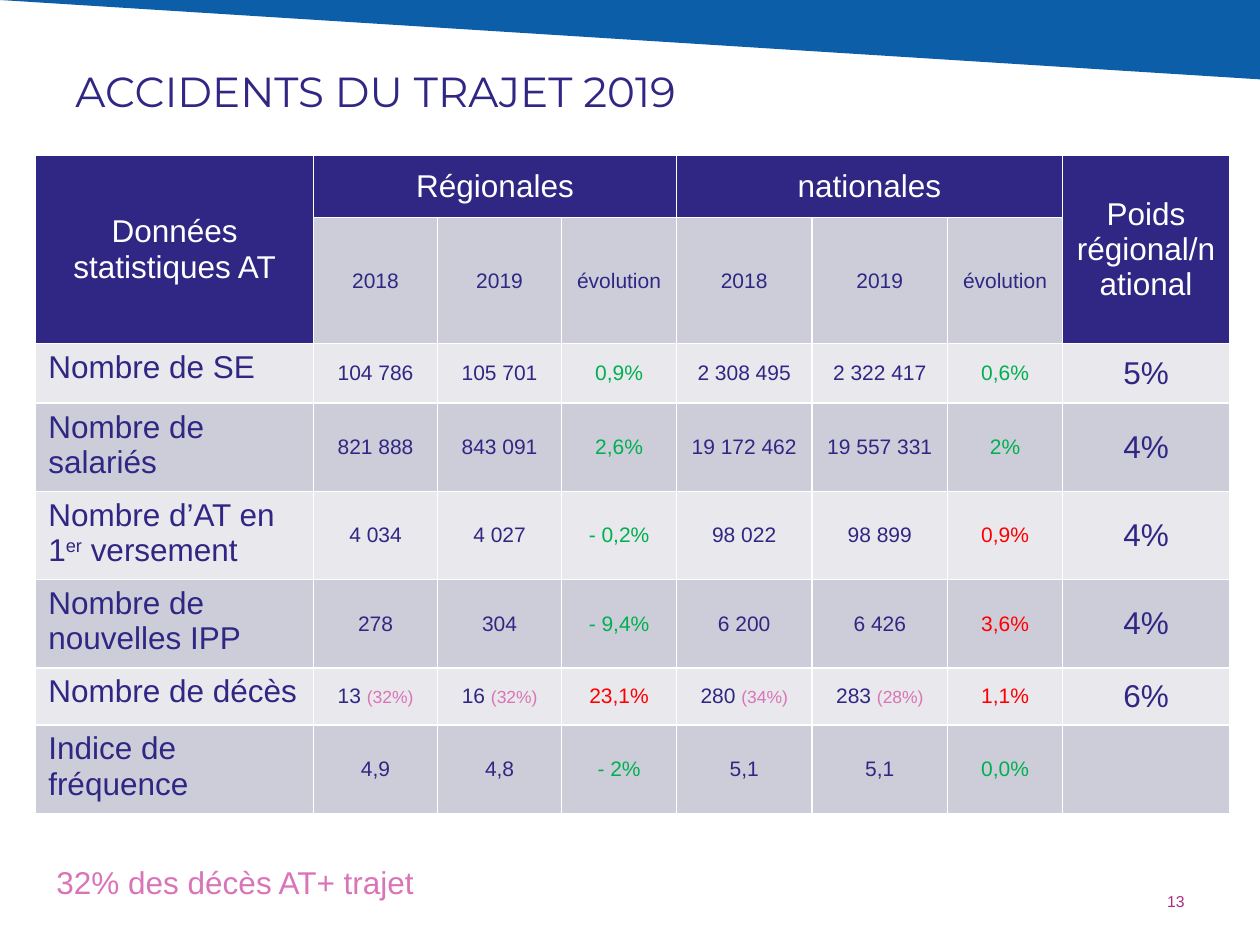
from dataclasses import dataclass

from pptx import Presentation
from pptx.dml.color import RGBColor
from pptx.enum.shapes import MSO_SHAPE
from pptx.enum.text import MSO_ANCHOR, PP_ALIGN
from pptx.util import Pt


@dataclass(frozen=True)
class Theme:
    blue: str = "0D5EA9"
    navy: str = "302683"
    white: str = "FFFFFF"
    dark_band: str = "CDCDD9"
    light_band: str = "E8E8ED"
    good: str = "00B050"
    bad: str = "FF0000"
    pink: str = "DA74B8"
    plum: str = "AB2E81"
    title_font: str = "Montserrat"
    body_font: str = "Arial"
    title: int = 24
    large: int = 18
    value: int = 12
    share: int = 10
    number: int = 9


T = Theme()


def add_run(p, text, size=T.large, color=T.navy, font=T.body_font, superscript=False):
    r = p.add_run()
    r.text = text
    r.font.size = Pt(size)
    r.font.name = font
    r.font.bold = False
    r.font.color.rgb = RGBColor.from_string(color)
    if superscript:
        r.font._element.set("baseline", "30000")


class Deck:
    def __init__(self, theme, prs):
        self.theme = theme
        self.s = prs.slides.add_slide(prs.slide_layouts[6])

    def banner(self, x, y, w, h):
        sp = self.s.shapes.add_shape(MSO_SHAPE.RIGHT_TRIANGLE, Pt(x), Pt(y), Pt(w), Pt(h))
        sp.rotation = 180
        sp.shadow.inherit = False
        sp.fill.solid()
        sp.fill.fore_color.rgb = RGBColor.from_string(self.theme.blue)
        sp.line.fill.background()

    def text(self, x, y, w, h, text, anchor=MSO_ANCHOR.MIDDLE, align=PP_ALIGN.LEFT,
             bottom=3.6, **fmt):
        tf = self.s.shapes.add_textbox(Pt(x), Pt(y), Pt(w), Pt(h)).text_frame
        tf.word_wrap = True
        tf.vertical_anchor = anchor
        tf.margin_bottom = Pt(bottom)
        p = tf.paragraphs[0]
        p.alignment = align
        add_run(p, text, **fmt)

    def table(self, x, y, widths, heights):
        table = self.s.shapes.add_table(len(heights), len(widths), Pt(x), Pt(y),
                                        Pt(sum(widths)), Pt(sum(heights))).table
        for column, width in zip(table.columns, widths):
            column.width = Pt(width)
        for row, height in zip(table.rows, heights):
            row.height = Pt(height)
        return table

    def cell(self, cell, fill, runs=(), centred=True):
        cell.fill.solid()
        cell.fill.fore_color.rgb = RGBColor.from_string(fill)
        p = cell.text_frame.paragraphs[0]
        if centred:
            cell.vertical_anchor = MSO_ANCHOR.MIDDLE
            p.alignment = PP_ALIGN.CENTER
        for text, fmt in runs:
            add_run(p, text, **fmt)


def value_runs(text, color=T.navy):
    """Split a value from the share that follows it in brackets."""
    number, bracket, share = text.partition("(")
    runs = [(number, dict(size=T.value, color=color))]
    if bracket:
        runs.append((bracket + share, dict(size=T.share, color=T.pink)))
    return runs


# Label, six values, weight, colours of the regional and national trends
ROWS = [
    ("Nombre de SE", ["104 786", "105 701", "0,9%", "2 308 495", "2 322 417", "0,6%"],
     "5%", T.good, T.good),
    ("Nombre de salariés", ["821 888", "843 091", "2,6%", "19 172 462", "19 557 331", "2%"],
     "4%", T.good, T.good),
    ("Nombre d’AT en 1^er^ versement", ["4 034", "4 027", "- 0,2%", "98 022", "98 899", "0,9%"],
     "4%", T.good, T.bad),
    ("Nombre de nouvelles IPP", ["278", "304", "- 9,4%", "6 200", "6 426", "3,6%"],
     "4%", T.good, T.bad),
    ("Nombre de décès",
     ["13 (32%)", "16 (32%)", "23,1%", "280 (34%)", "283 (28%)", "1,1%"],
     "6%", T.bad, T.bad),
    ("Indice de fréquence", ["4,9", "4,8", "- 2%", "5,1", "5,1", "0,0%"],
     "", T.good, T.good),
]


def fill_header(deck, table):
    spans = [(0, 0, 1, 0, "Données statistiques AT"), (0, 1, 0, 3, "Régionales"),
             (0, 4, 0, 6, "nationales"), (0, 7, 1, 7, "Poids régional/national")]
    for top, left, bottom, right, text in spans:
        cell = table.cell(top, left)
        cell.merge(table.cell(bottom, right))
        deck.cell(cell, T.navy, [(text, dict(color=T.white))])
    for col, text in enumerate(["2018", "2019", "évolution"] * 2, 1):
        deck.cell(table.cell(1, col), T.dark_band, value_runs(text))


def fill_body(deck, table):
    for i, (label, values, weight, regional, national) in enumerate(ROWS):
        row = i + 2
        band = T.dark_band if i % 2 else T.light_band
        label_runs = [(part, dict(superscript=n % 2 == 1))
                      for n, part in enumerate(label.split("^"))]
        deck.cell(table.cell(row, 0), band, label_runs, centred=False)
        trends = {3: regional, 6: national}
        for col, value in enumerate(values, 1):
            deck.cell(table.cell(row, col), band, value_runs(value, trends.get(col, T.navy)))
        deck.cell(table.cell(row, 7), band, [(weight, {})] if weight else [])


def main():
    prs = Presentation()
    prs.slide_width, prs.slide_height = Pt(720), Pt(540)
    deck = Deck(T, prs)

    # Banner, title and page number
    deck.banner(0, 0, 720, 45.36)
    deck.text(36, 5, 648, 90, "ACCIDENTS DU TRAJET 2019", bottom=0,
              size=T.title, font=T.title_font)
    deck.text(516, 500.5, 168, 28.8, "13", align=PP_ALIGN.RIGHT, size=T.number, color=T.plum)

    # Statistics table
    table = deck.table(20.4, 88.8, [158.8, 70.8, 71, 65.6, 77.4, 77.6, 65.6, 95.6],
                       [35.6, 36, 34, 49, 49, 49, 32.6, 49])
    fill_header(deck, table)
    fill_body(deck, table)

    # Footnote
    deck.text(25.2, 489.8, 230, 29, "32% des décès AT+ trajet",
              anchor=MSO_ANCHOR.TOP, color=T.pink)

    prs.save("out.pptx")


if __name__ == "__main__":
    main()
